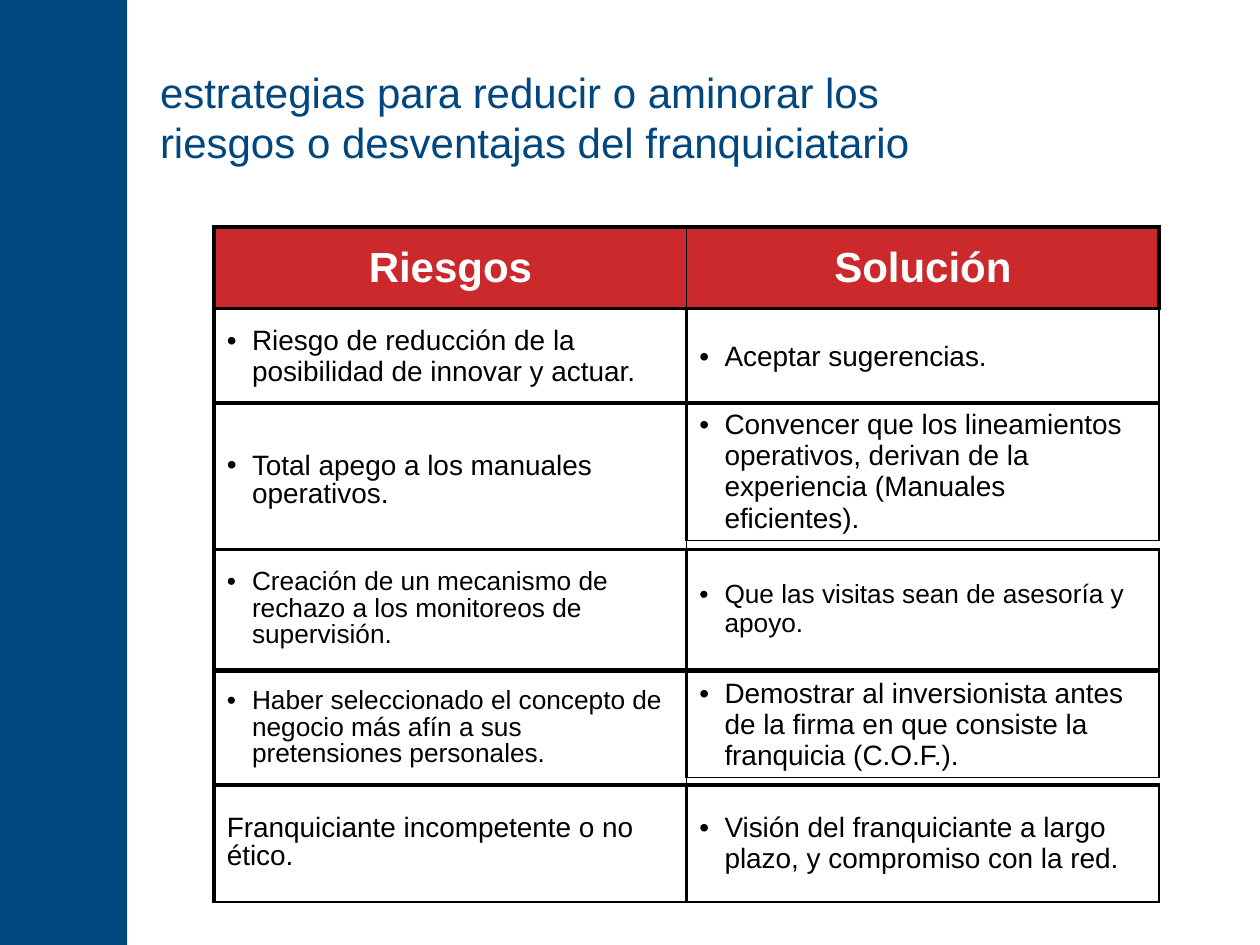
from pptx import Presentation
from pptx.dml.color import RGBColor
from pptx.enum.shapes import MSO_SHAPE
from pptx.enum.text import MSO_ANCHOR, PP_ALIGN
from pptx.oxml.ns import qn
from pptx.util import Inches, Pt
from lxml.etree import SubElement

TITLE = "estrategias para reducir o aminorar los riesgos o desventajas del franquiciatario"
HEADERS = ["Riesgos", "Solución"]
BLUE, RED, WHITE, BLACK = "00467F", "CB292B", "FFFFFF", "000000"
LEFT, COL_W = 1.7, 3.75
HEAD_TOP, HEAD_H = 1.8, 0.65
THICK, THIN = 2.25, 1

# top, then per column: text, size, row height, line spacing, bullet
ROWS = [
    (2.45, [("Riesgo de reducción de la posibilidad de innovar y actuar.", 16, 0.76, 1, True),
            ("Aceptar sugerencias.", 16, 0.76, 1, True)]),
    (3.2, [("Total apego a los manuales operativos.", 16, 1.23, 0.9, True),
           ("Convencer que los lineamientos operativos, derivan de la experiencia "
            "(Manuales eficientes).", 16, 0.76, 1, True)]),
    (4.36, [("Creación de un mecanismo de rechazo a los monitoreos de supervisión.", 15, 0.95, 0.9, True),
            ("Que las visitas sean de asesoría y apoyo.", 15, 0.95, 1, True)]),
    (5.33, [("Haber seleccionado el concepto de negocio más afín a sus pretensiones personales.",
             15, 0.9, 0.9, True),
            ("Demostrar al inversionista antes de la firma en que consiste la franquicia (C.O.F.).",
             16, 0.76, 1, True)]),
    (6.23, [("Franquiciante incompetente o no ético.", 16, 0.93, 0.9, False),
            ("Visión del franquiciante a largo plazo, y compromiso con la red.", 16, 0.93, 1, True)]),
]


def rgb(color):
    return RGBColor.from_string(color)


def style(p, size, color, bold=False):
    for r in p.runs:
        r.font.name = "Arial"
        r.font.size = Pt(size)
        r.font.bold = bold
        r.font.color.rgb = rgb(color)


def add_table(s, left, top, cols, height):
    table = s.shapes.add_table(1, cols, Inches(left), Inches(top),
                               Inches(COL_W * cols), Inches(height)).table
    table.first_row = table.horz_banding = False
    return table


def fill_cell(cell, text, fill, borders):
    tcPr = cell._tc.get_or_add_tcPr()
    for side, width in zip("LRTB", borders):
        ln = SubElement(tcPr, qn(f"a:ln{side}"), w=str(Pt(width)))
        SubElement(SubElement(ln, qn("a:solidFill")), qn("a:srgbClr"), val=BLACK)
    cell.fill.solid()
    cell.fill.fore_color.rgb = rgb(fill)
    cell.vertical_anchor = MSO_ANCHOR.MIDDLE
    cell.text_frame.text = text
    return cell.text_frame.paragraphs[0]


def add_bullet(p):
    pPr = p._p.get_or_add_pPr()
    pPr.set("marL", str(Inches(0.2)))
    pPr.set("indent", str(Inches(-0.2)))
    SubElement(pPr, qn("a:buFont"), typeface="Arial")
    SubElement(pPr, qn("a:buChar"), char="•")


prs = Presentation()
prs.slide_width, prs.slide_height = Inches(10), Inches(7.5)
s = prs.slides.add_slide(prs.slide_layouts[5])

band = s.shapes.add_shape(MSO_SHAPE.RECTANGLE, 0, 0, Inches(1.01), prs.slide_height)
band.shadow.inherit = False
band.fill.solid()
band.fill.fore_color.rgb = rgb(BLUE)
band.line.fill.background()

title = s.shapes.title
title.left, title.top, title.width, title.height = map(Inches, (1.17, 0.3, 6.17, 1.25))
tf = title.text_frame
tf.text = TITLE
tf.word_wrap = True
tf.vertical_anchor = MSO_ANCHOR.MIDDLE
tf.paragraphs[0].alignment = PP_ALIGN.LEFT
style(tf.paragraphs[0], 24, BLUE)

header = add_table(s, LEFT, HEAD_TOP, len(HEADERS), HEAD_H)
for col, text in enumerate(HEADERS):
    sides = (THIN, THICK) if col else (THICK, THIN)
    p = fill_cell(header.cell(0, col), text, RED, (*sides, THICK, THICK))
    p.alignment = PP_ALIGN.CENTER
    style(p, 24, WHITE, True)

for col in range(len(HEADERS)):
    for top, cells in ROWS:
        text, size, height, spacing, bullet = cells[col]
        table = add_table(s, LEFT + col * COL_W, top, 1, height)
        p = fill_cell(table.cell(0, 0), text, WHITE, (THICK, THIN, THICK, THIN))
        if bullet:
            add_bullet(p)
        p.line_spacing = spacing
        style(p, size, BLACK)

prs.save("out.pptx")
